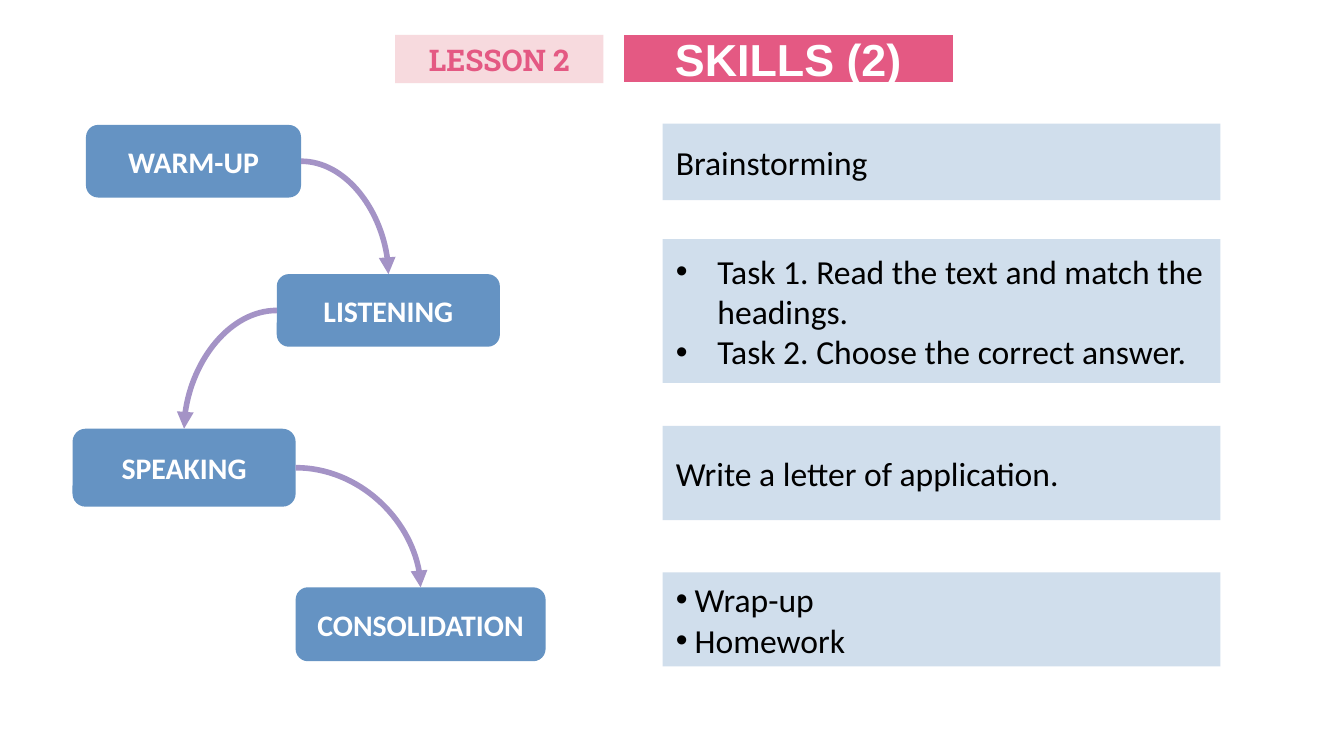
from lxml.etree import SubElement
from pptx import Presentation
from pptx.dml.color import RGBColor
from pptx.enum.shapes import MSO_CONNECTOR, MSO_SHAPE
from pptx.enum.text import MSO_ANCHOR, PP_ALIGN
from pptx.oxml.ns import qn
from pptx.util import Inches, Pt

# Content: stage, its box (left, top, width, height), activities,
# activity panel (top, height), bullet indent (0 means no bullets)
STAGES = [
    ("WARM-UP", (0.64, 0.93, 1.6, 0.54),
     ["Brainstorming"], (0.92, 0.57), 0),
    ("LISTENING", (2.06, 2.04, 1.66, 0.54),
     ["Task 1. Read the text and match the headings.",
      "Task 2. Choose the correct answer."], (1.78, 1.07), 0.31),
    ("SPEAKING", (0.54, 3.19, 1.66, 0.58),
     ["Write a letter of application."], (3.17, 0.7), 0),
    ("CONSOLIDATION", (2.2, 4.37, 1.86, 0.55),
     ["Wrap-up", "Homework"], (4.26, 0.7), 0.14),
]
LESSON = ("LESSON 2", (2.94, 0.26, 1.55, 0.36))
TITLE = ("SKILLS (2)", (4.63, 0.25, 2.47, 0.37))
PANEL_LEFT, PANEL_WIDTH = 4.93, 4.15
TOP_SITE, LEFT_SITE, RIGHT_SITE = 0, 1, 3

# Each style: fill, font name, size, colour, bold
THEME = {
    "stage": ("6593C3", "Calibri", 16, "FFFFFF", True),
    "panel": ("D0DEEC", "Calibri", 18, "000000", False),
    "title": ("E45983", "Arial", 24, "FFFFFF", True),
    "lesson": ("F7DADE", "Roboto Slab", 16, "E45983", True),
    "arrow": ("A493C6", 3),
    "title_border": ("FFFFFF", 1.5),
}


def set_line(line, style):
    color, width = style
    line.color.rgb = RGBColor.from_string(color)
    line.width = Pt(width)


def add_bullet(para, indent):
    properties = para._p.get_or_add_pPr()
    properties.set("marL", str(Inches(indent)))
    properties.set("indent", str(-Inches(indent)))
    SubElement(properties, qn("a:buFont"), typeface="Arial")
    SubElement(properties, qn("a:buChar"), char="•")


def add_box(page, kind, area, lines, style, align=PP_ALIGN.CENTER, indent=0):
    fill, font, size, color, bold = THEME[style]
    box = page.shapes.add_shape(kind, *map(Inches, area))
    box.shadow.inherit = False
    box.fill.solid()
    box.fill.fore_color.rgb = RGBColor.from_string(fill)
    box.line.fill.background()
    frame = box.text_frame
    frame.word_wrap = True
    frame.vertical_anchor = MSO_ANCHOR.MIDDLE
    for index, text in enumerate(lines):
        para = frame.add_paragraph() if index else frame.paragraphs[0]
        para.text = text
        para.alignment = align
        para.font.name = font
        para.font.size = Pt(size)
        para.font.bold = bold
        para.font.color.rgb = RGBColor.from_string(color)
        if indent:
            add_bullet(para, indent)
    return box


def add_arrow(page, start, end):
    """Curve from the side of one stage to the top of the next."""
    side = RIGHT_SITE if end.left > start.left else LEFT_SITE
    arrow = page.shapes.add_connector(MSO_CONNECTOR.CURVE, 0, 0, 0, 0)
    arrow.begin_connect(start, side)
    arrow.end_connect(end, TOP_SITE)
    set_line(arrow.line, THEME["arrow"])
    properties = arrow._element.spPr
    properties.find(qn("a:prstGeom")).set("prst", "curvedConnector2")
    SubElement(properties.find(qn("a:ln")), qn("a:tailEnd"), type="triangle")
    SubElement(properties, qn("a:effectLst"))


def main():
    deck = Presentation()
    deck.slide_width = Inches(10)
    deck.slide_height = deck.slide_width * 9 // 16
    page = deck.slides.add_slide(deck.slide_layouts[6])

    # Heading
    title, area = TITLE
    heading = add_box(page, MSO_SHAPE.RECTANGLE, area, [title], "title")
    set_line(heading.line, THEME["title_border"])
    lesson, area = LESSON
    add_box(page, MSO_SHAPE.RECTANGLE, area, [lesson], "lesson")

    # Stages with their activity panels
    boxes = []
    for name, area, activities, (top, height), indent in STAGES:
        boxes.append(add_box(page, MSO_SHAPE.ROUNDED_RECTANGLE, area, [name], "stage"))
        add_box(page, MSO_SHAPE.RECTANGLE, (PANEL_LEFT, top, PANEL_WIDTH, height),
                activities, "panel", PP_ALIGN.LEFT, indent)

    # Arrows from stage to stage
    for start, end in zip(boxes, boxes[1:]):
        add_arrow(page, start, end)

    deck.save("out.pptx")


if __name__ == "__main__":
    main()
